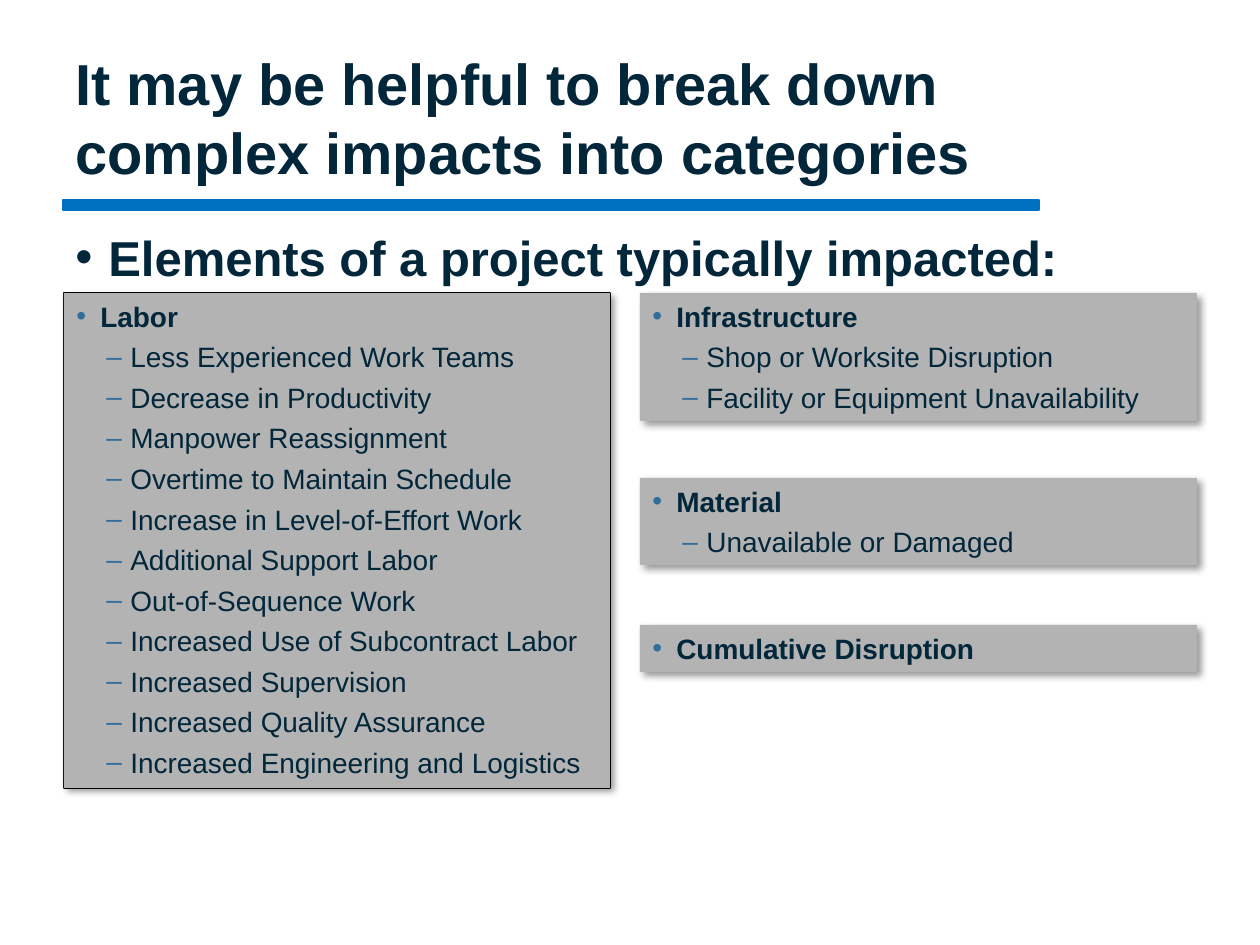
from dataclasses import dataclass

from lxml import etree
from pptx import Presentation
from pptx.dml.color import RGBColor
from pptx.enum.shapes import MSO_SHAPE
from pptx.enum.text import MSO_ANCHOR, PP_ALIGN
from pptx.oxml.ns import qn
from pptx.util import Emu, Pt

RECTANGLE = MSO_SHAPE.RECTANGLE
TOP, MIDDLE = MSO_ANCHOR.TOP, MSO_ANCHOR.MIDDLE
LEFT = PP_ALIGN.LEFT
EMU_PER_PX = 914400 / 126


@dataclass(frozen=True)
class Theme:
    font: str = "Arial"
    text: str = "02263A"
    bullet: str = "306F9A"
    rule: str = "0070C0"
    panel: str = "B3B3B3"
    black: str = "000000"
    title_size: int = 33
    heading_size: int = 28
    item_size: int = 16
    item_gap: int = 4


@dataclass(frozen=True)
class Box:
    left: int
    top: int
    width: int
    height: int


@dataclass(frozen=True)
class Bullet:
    symbol: str
    margin: int
    hanging: int
    color: str


@dataclass(frozen=True)
class Category:
    box: Box
    name: str
    items: tuple[str, ...] = ()


THEME = Theme()
HEADING_BULLET = Bullet("•", 33, 33, THEME.text)
CATEGORY_BULLET = Bullet("•", 24, 24, THEME.bullet)
ITEM_BULLET = Bullet("–", 54, 24, THEME.bullet)

LABOR_BOX = Box(64, 293, 546, 495)
RIGHT_LEFT, RIGHT_WIDTH = 640, 557
CATEGORIES = (
    Category(LABOR_BOX, "Labor", (
        "Less Experienced Work Teams",
        "Decrease in Productivity",
        "Manpower Reassignment",
        "Overtime to Maintain Schedule",
        "Increase in Level-of-Effort Work",
        "Additional Support Labor",
        "Out-of-Sequence Work",
        "Increased Use of Subcontract Labor",
        "Increased Supervision",
        "Increased Quality Assurance",
        "Increased Engineering and Logistics",
    )),
    Category(Box(RIGHT_LEFT, 293, RIGHT_WIDTH, 128), "Infrastructure", (
        "Shop or Worksite Disruption",
        "Facility or Equipment Unavailability",
    )),
    Category(Box(RIGHT_LEFT, 478, RIGHT_WIDTH, 87), "Material", (
        "Unavailable or Damaged",
    )),
    Category(Box(RIGHT_LEFT, 625, RIGHT_WIDTH, 47), "Cumulative Disruption"),
)


def px(length: int) -> Emu:
    return Emu(round(length * EMU_PER_PX))


def place(box: Box) -> tuple[Emu, Emu, Emu, Emu]:
    return px(box.left), px(box.top), px(box.width), px(box.height)


def add_rectangle(slide, box: Box, fill: str, line: str | None = None):
    shape = slide.shapes.add_shape(RECTANGLE, *place(box))
    shape.shadow.inherit = False
    shape.fill.solid()
    shape.fill.fore_color.rgb = RGBColor.from_string(fill)
    if line:
        shape.line.color.rgb = RGBColor.from_string(line)
        shape.line.width = Pt(0.75)
    else:
        shape.line.fill.background()
    return shape


def add_shadow(shape) -> None:
    effects = shape._element.spPr.find(qn("a:effectLst"))
    shadow = etree.SubElement(
        effects, qn("a:outerShdw"), blurRad=str(Pt(4)), dist=str(Pt(3)),
        dir=str(45 * 60000), algn="tl", rotWithShape="0")
    color = etree.SubElement(shadow, qn("a:srgbClr"), val=THEME.black)
    etree.SubElement(color, qn("a:alpha"), val="40000")


def set_bullet(paragraph, bullet: Bullet) -> None:
    properties = paragraph._p.get_or_add_pPr()
    properties.set("marL", str(px(bullet.margin)))
    properties.set("indent", str(-px(bullet.hanging)))
    color = etree.SubElement(properties, qn("a:buClr"))
    etree.SubElement(color, qn("a:srgbClr"), val=bullet.color)
    etree.SubElement(properties, qn("a:buFont"), typeface=THEME.font)
    etree.SubElement(properties, qn("a:buChar"), char=bullet.symbol)


def write(paragraph, text: str, size: int, bold: bool = True,
          bullet: Bullet | None = None) -> None:
    paragraph.text = text
    paragraph.alignment = LEFT
    if bullet:
        set_bullet(paragraph, bullet)
    for run in paragraph.runs:
        run.font.name = THEME.font
        run.font.size = Pt(size)
        run.font.bold = bold
        run.font.color.rgb = RGBColor.from_string(THEME.text)


def add_text(slide, box: Box, text: str, size: int, anchor,
             bullet: Bullet | None = None) -> None:
    text_frame = slide.shapes.add_textbox(*place(box)).text_frame
    text_frame.word_wrap = True
    text_frame.vertical_anchor = anchor
    write(text_frame.paragraphs[0], text, size, bullet=bullet)


def add_category(slide, category: Category) -> None:
    shape = add_rectangle(slide, category.box, THEME.panel)
    add_shadow(shape)
    text_frame = shape.text_frame
    text_frame.word_wrap = True
    text_frame.vertical_anchor = TOP
    write(text_frame.paragraphs[0], category.name, THEME.item_size,
          bullet=CATEGORY_BULLET)
    for item in category.items:
        paragraph = text_frame.add_paragraph()
        paragraph.space_before = Pt(THEME.item_gap)
        write(paragraph, item, THEME.item_size, False, ITEM_BULLET)


def main() -> None:
    presentation = Presentation()
    presentation.slide_width, presentation.slide_height = px(1260), px(945)
    slide = presentation.slides.add_slide(presentation.slide_layouts[6])

    add_rectangle(slide, Box(63, 200, 976, 10), THEME.rule, THEME.rule)
    add_text(slide, Box(63, 38, 987, 158),
             "It may be helpful to break down complex impacts into categories",
             THEME.title_size, MIDDLE)
    add_text(slide, Box(63, 221, 1134, 73),
             "Elements of a project typically impacted:",
             THEME.heading_size, TOP, HEADING_BULLET)
    add_rectangle(slide, LABOR_BOX, THEME.black, THEME.black)
    for category in CATEGORIES:
        add_category(slide, category)

    presentation.save("out.pptx")


if __name__ == "__main__":
    main()
